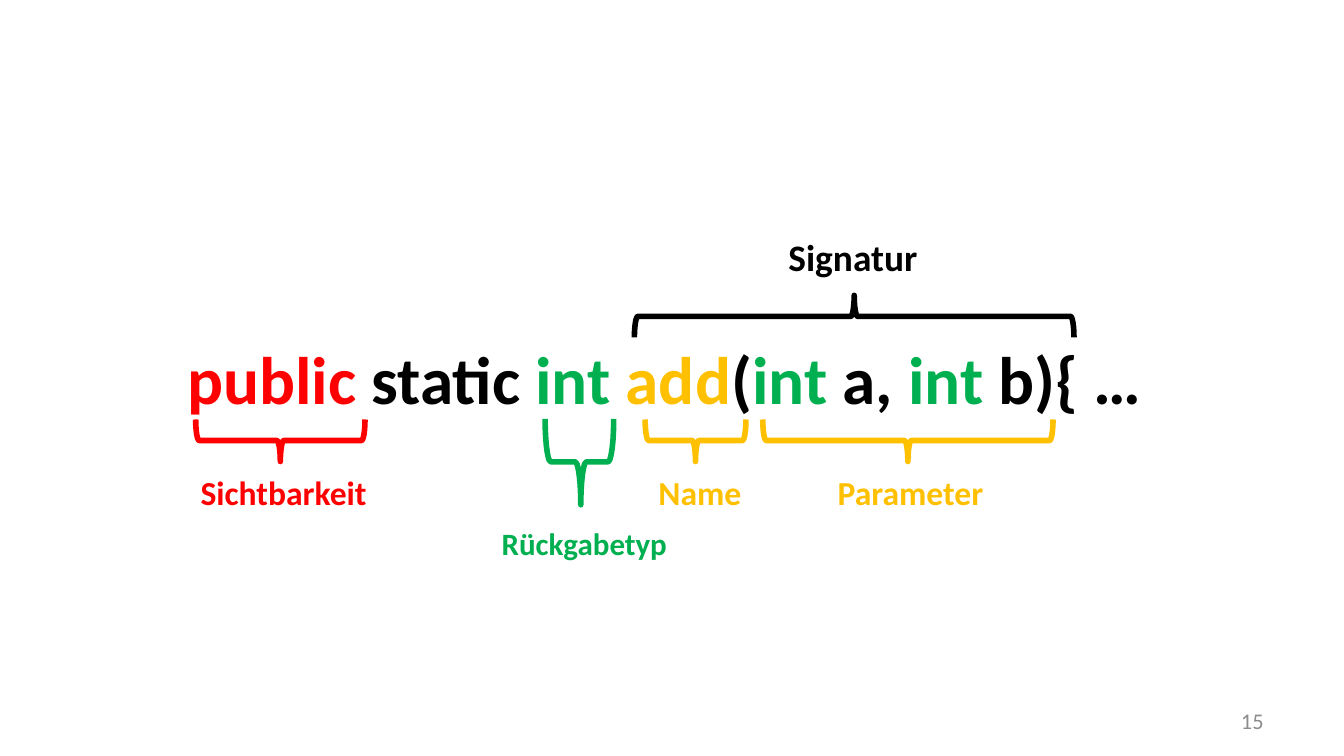
"""Build a slide that labels the parts of a Java method header."""
from pptx import Presentation
from pptx.dml.color import RGBColor
from pptx.enum.shapes import MSO_SHAPE
from pptx.enum.text import MSO_ANCHOR, PP_ALIGN
from pptx.util import Pt

LEFT_BRACE = MSO_SHAPE.LEFT_BRACE
MIDDLE = MSO_ANCHOR.MIDDLE
CENTER, RIGHT = PP_ALIGN.CENTER, PP_ALIGN.RIGHT

RED = RGBColor(0xFF, 0x00, 0x00)
GREEN = RGBColor(0x00, 0xB0, 0x50)
YELLOW = RGBColor(0xFF, 0xC0, 0x00)
BLACK = RGBColor(0x00, 0x00, 0x00)
GRAY = RGBColor(0x8C, 0x8C, 0x8C)


def add_text(page, left, top, width, height, spans, size, bold=True, align=CENTER):
    box = page.shapes.add_textbox(Pt(left), Pt(top), Pt(width), Pt(height))
    frame = box.text_frame
    frame.word_wrap = True
    frame.vertical_anchor = MIDDLE
    para = frame.paragraphs[0]
    para.alignment = align
    for text, color in spans:
        span = para.add_run()
        span.text = text
        span.font.name = "Calibri"
        span.font.size = Pt(size)
        span.font.bold = bold
        span.font.color.rgb = color


def add_brace(page, center_x, center_y, span_width, depth, rotation, color):
    brace = page.shapes.add_shape(
        LEFT_BRACE, Pt(center_x - depth / 2), Pt(center_y - span_width / 2),
        Pt(depth), Pt(span_width))
    brace.rotation = rotation
    brace.shadow.inherit = False
    brace.fill.background()
    brace.line.color.rgb = color
    brace.line.width = Pt(3)
    return brace


deck = Presentation()
deck.slide_width, deck.slide_height = Pt(720), Pt(405)
page = deck.slides.add_slide(deck.slide_layouts[6])

method_header = [
    ("public ", RED), ("static ", BLACK), ("int ", GREEN), ("add", YELLOW),
    ("(", BLACK), ("int", GREEN), (" a, ", BLACK), ("int", GREEN),
    (" b){ … ", BLACK),
]
add_text(page, 45, 168.5, 630, 67.5, method_header, 36)
add_text(page, 516.5, 375, 167.5, 21.5, [("15", GRAY)], 12, bold=False, align=RIGHT)

for center_x, span_width, color in [
    (150.2, 90.7, RED), (372.6, 54, YELLOW), (486.4, 155.5, YELLOW),
]:
    add_brace(page, center_x, 236, span_width, 22.5, 270, color)

return_brace = add_brace(page, 310.4, 247.4, 36.7, 46, 270, GREEN)
return_brace.adjustments[1] = 0.52
add_brace(page, 457.6, 169.5, 235.5, 22.5, 90, BLACK)

for text, left, top, width, size, color in [
    ("Sichtbarkeit", 99.5, 247, 105, 18, RED),
    ("Name", 322.5, 247, 105, 18, YELLOW),
    ("Rückgabetyp", 260.5, 274.5, 105, 16.6, GREEN),
    ("Parameter", 417.5, 247, 140.5, 18, YELLOW),
    ("Signatur", 361.5, 121, 191, 20, BLACK),
]:
    add_text(page, left, top, width, 33, [(text, color)], size)

deck.save("out.pptx")
